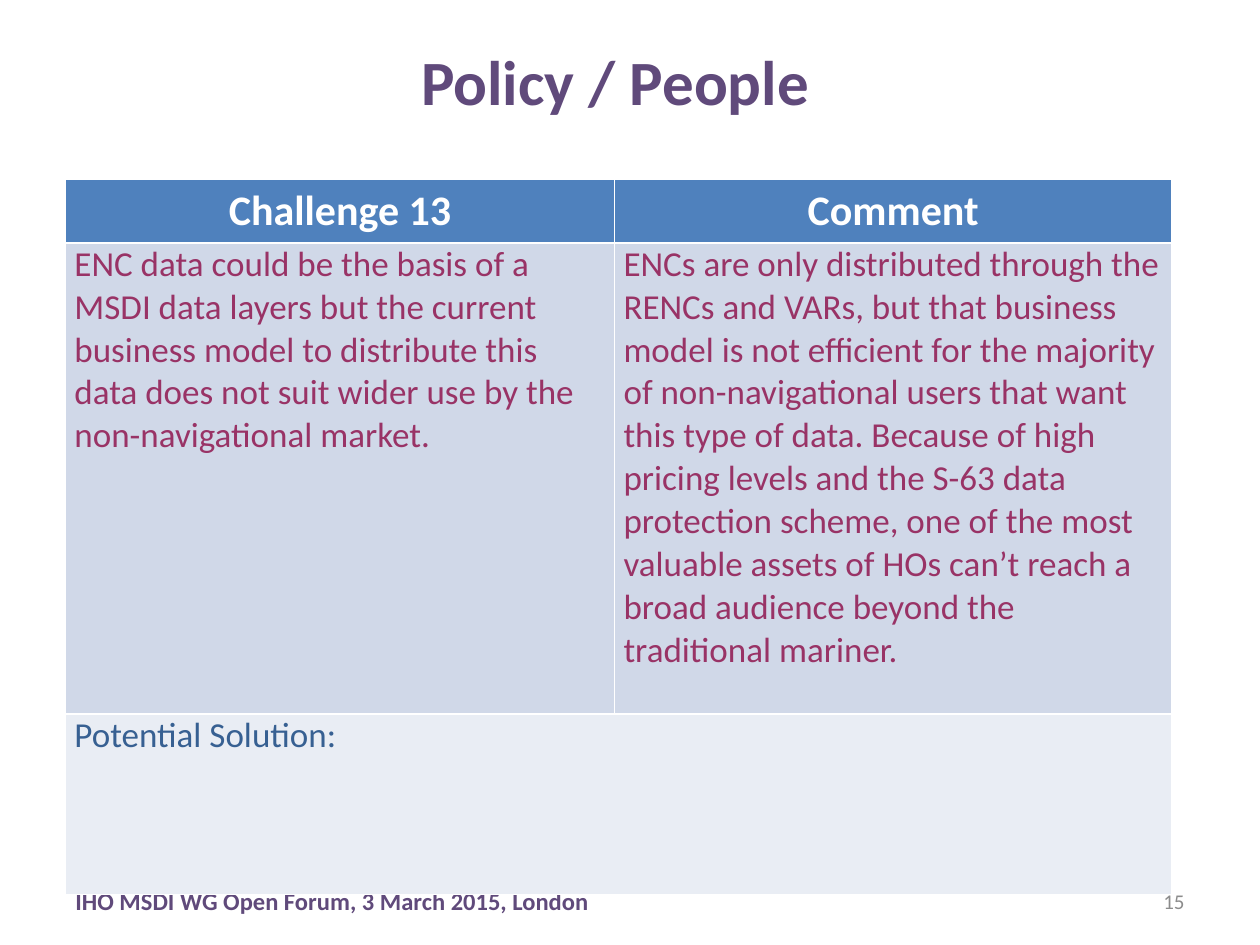
"""Build the Policy / People challenge slide."""
from pptx import Presentation
from pptx.dml.color import RGBColor
from pptx.enum.text import MSO_ANCHOR, PP_ALIGN
from pptx.util import Cm, Pt

COLORS = {
    "purple": "604A7B", "gray": "8C8C8C", "white": "FFFFFF",
    "plum": "993366", "blue": "376092",
    "header": "4F81BD", "body": "D0D8E8", "solution": "E9EDF4",
}
FOOTER_TOP, FOOTER_HEIGHT = 17.65, 1.02
TEXTS = [
    ("IHO MSDI WG Open Forum, 3 March 2015, London",
     (1.27, FOOTER_TOP, 15.44, FOOTER_HEIGHT), 14, "purple", True, PP_ALIGN.LEFT),
    ("15", (18.21, FOOTER_TOP, 5.92, FOOTER_HEIGHT), 12, "gray", False, PP_ALIGN.RIGHT),
]
TITLE = ("Policy / People", (6.43, 0.23, 11.94, 2.77), 36, "purple", True, PP_ALIGN.CENTER)
TABLE_LEFT, TABLE_TOP = 1.32, 3.62
COLUMN_WIDTHS = [11.07, 11.23]
ROWS = [
    {"height": 1.25, "fill": "header", "color": "white", "size": 24, "bold": True,
     "align": PP_ALIGN.CENTER, "margin": 0.13, "cells": ["Challenge 13", "Comment"]},
    {"height": 9.5, "fill": "body", "color": "plum", "size": 20, "bold": False,
     "align": PP_ALIGN.LEFT, "margin": 0, "cells": [
         "ENC data could be the basis of a MSDI data layers but the current business "
         "model to distribute this data does not suit wider use by the "
         "non-navigational market.",
         "ENCs are only distributed through the RENCs and VARs, but that business model "
         "is not efficient for the majority of non-navigational users that want this "
         "type of data. Because of high pricing levels and the S-63 data protection "
         "scheme, one of the most valuable assets of HOs can’t reach a broad audience "
         "beyond the traditional mariner."]},
    {"height": 3.63, "fill": "solution", "color": "blue", "size": 20, "bold": False,
     "align": PP_ALIGN.LEFT, "margin": 0, "cells": ["Potential Solution:"]},
]


def write(text_frame, text, size, color, bold, align):
    text_frame.text = text
    paragraph = text_frame.paragraphs[0]
    paragraph.alignment = align
    font = paragraph.runs[0].font
    font.name, font.size, font.bold = "Calibri", Pt(size), bold
    font.color.rgb = RGBColor.from_string(COLORS[color])


def add_text(slide, text, box, *style):
    text_frame = slide.shapes.add_textbox(*map(Cm, box)).text_frame
    text_frame.word_wrap = True
    text_frame.vertical_anchor = MSO_ANCHOR.MIDDLE
    write(text_frame, text, *style)


def add_challenge_table(slide):
    height = sum(row["height"] for row in ROWS)
    table = slide.shapes.add_table(
        len(ROWS), len(COLUMN_WIDTHS), Cm(TABLE_LEFT), Cm(TABLE_TOP),
        Cm(sum(COLUMN_WIDTHS)), Cm(height)).table
    for column, width in zip(table.columns, COLUMN_WIDTHS):
        column.width = Cm(width)
    for index, row in enumerate(ROWS):
        table.rows[index].height = Cm(row["height"])
        for cell in table.rows[index].cells:
            cell.fill.solid()
            cell.fill.fore_color.rgb = RGBColor.from_string(COLORS[row["fill"]])
            cell.margin_left = cell.margin_right = Cm(0.18)
            cell.margin_top = cell.margin_bottom = Cm(row["margin"])
        for column, text in enumerate(row["cells"]):
            write(table.cell(index, column).text_frame, text,
                  row["size"], row["color"], row["bold"], row["align"])
    last = len(ROWS) - 1
    table.cell(last, 0).merge(table.cell(last, len(COLUMN_WIDTHS) - 1))


def main():
    presentation = Presentation()
    presentation.slide_width, presentation.slide_height = Cm(25.4), Cm(19.05)
    slide = presentation.slides.add_slide(presentation.slide_layouts[6])
    for item in TEXTS:
        add_text(slide, *item)
    add_challenge_table(slide)
    add_text(slide, *TITLE)
    presentation.save("out.pptx")


if __name__ == "__main__":
    main()
